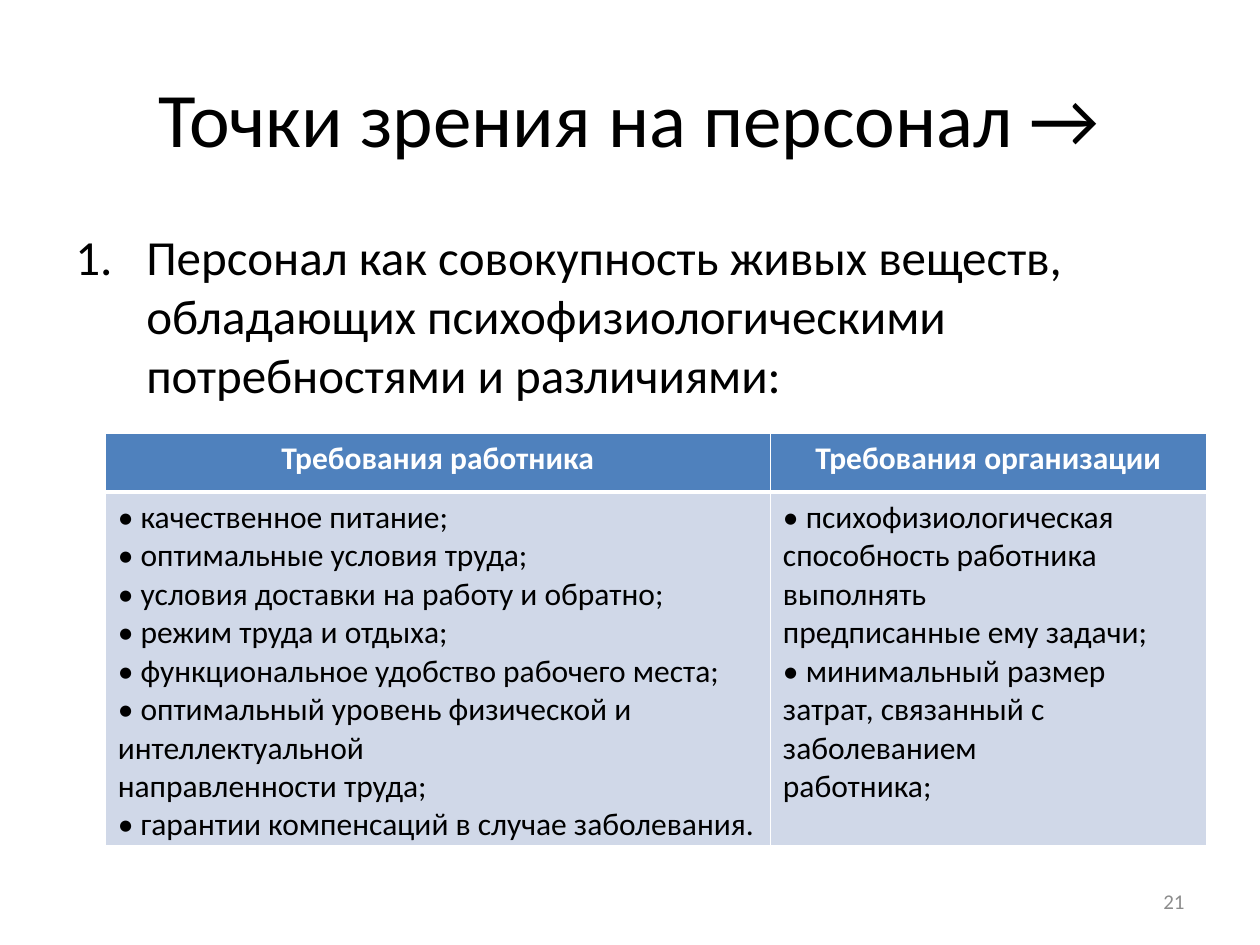
from lxml import etree
from pptx import Presentation
from pptx.dml.color import RGBColor
from pptx.enum.text import MSO_ANCHOR, PP_ALIGN
from pptx.oxml.ns import qn
from pptx.util import Cm, Pt

LEFT, CENTER, RIGHT = PP_ALIGN.LEFT, PP_ALIGN.CENTER, PP_ALIGN.RIGHT
TOP, MIDDLE = MSO_ANCHOR.TOP, MSO_ANCHOR.MIDDLE
BLACK = RGBColor(0x00, 0x00, 0x00)
WHITE = RGBColor(0xFF, 0xFF, 0xFF)
GRAY = RGBColor(0x8C, 0x8C, 0x8C)
BLUE = RGBColor(0x4F, 0x81, 0xBD)
PALE_BLUE = RGBColor(0xD0, 0xD8, 0xE8)

HEADINGS = ["Требования работника", "Требования организации"]
DEMANDS = [
    [
        "• качественное питание;",
        "• оптимальные условия труда;",
        "• условия доставки на работу и обратно;",
        "• режим труда и отдыха;",
        "• функциональное удобство рабочего места;",
        "• оптимальный уровень физической и интеллектуальной",
        "направленности труда;",
        "• гарантии компенсаций в случае заболевания.",
    ],
    [
        "• психофизиологическая способность работника выполнять",
        "предписанные ему задачи;",
        "• минимальный размер затрат, связанный с заболеванием",
        "работника;",
    ],
]


class SlideBuilder:
    def __init__(self, page, font="Calibri"):
        self.page = page
        self.font = font

    def add_span(self, para, text, size, color, align=LEFT, bold=False):
        para.alignment = align
        span = para.add_run()
        span.text = text
        span.font.name = self.font
        span.font.size = Pt(size)
        span.font.bold = bold
        span.font.color.rgb = color

    def text(self, place, text, size, color, align=LEFT, anchor=MIDDLE):
        """Add a one-paragraph text box and return its paragraph."""
        box = self.page.shapes.add_textbox(*map(Cm, place))
        frame = box.text_frame
        frame.word_wrap = True
        frame.vertical_anchor = anchor
        para = frame.paragraphs[0]
        self.add_span(para, text, size, color, align)
        return para

    def numbered(self, place, text, size, color, indent):
        para = self.text(place, text, size, color, anchor=TOP)
        para.space_before = Pt(size * 0.2)
        properties = para._p.get_or_add_pPr()
        properties.set("marL", str(Cm(indent)))
        properties.set("indent", str(-Cm(indent)))
        etree.SubElement(properties, qn("a:buFont"), typeface="+mj-lt")
        etree.SubElement(properties, qn("a:buAutoNum"), type="arabicPeriod")

    def table(self, place, widths, heights):
        frame = self.page.shapes.add_table(len(heights), len(widths), *map(Cm, place))
        table = frame.table
        for column, width in zip(table.columns, widths):
            column.width = Cm(width)
        for row, height in zip(table.rows, heights):
            row.height = Cm(height)
        return table

    def cell(self, cell, lines, fill, color, top=1, bottom=1, **style):
        frame = cell.text_frame
        for index, line in enumerate(lines):
            para = frame.add_paragraph() if index else frame.paragraphs[0]
            self.add_span(para, line, 18, color, **style)
        cell.fill.solid()
        cell.fill.fore_color.rgb = fill
        self.borders(cell, {"lnL": 1, "lnR": 1, "lnT": top, "lnB": bottom})

    def borders(self, cell, widths):
        """Draw white cell borders; the schema puts them before the fill."""
        properties = cell._tc.get_or_add_tcPr()
        for position, (side, width) in enumerate(widths.items()):
            line = etree.Element(qn(f"a:{side}"), w=str(Pt(width)))
            solid = etree.SubElement(line, qn("a:solidFill"))
            etree.SubElement(solid, qn("a:srgbClr"), val=str(WHITE))
            properties.insert(position, line)


def main():
    deck = Presentation()
    deck.slide_width, deck.slide_height = Cm(25.4), Cm(19.05)
    builder = SlideBuilder(deck.slides.add_slide(deck.slide_layouts[6]))

    builder.text((1.27, 0.76, 22.86, 3.18), "Точки зрения на персонал →", 44, BLACK, CENTER)
    builder.numbered(
        (1.27, 4.45, 22.86, 12.57),
        "Персонал как совокупность живых веществ, обладающих "
        "психофизиологическими потребностями и различиями:",
        28, BLACK, indent=1.43,
    )
    builder.text((18.2, 17.66, 5.93, 1.01), "21", 12, GRAY, RIGHT)

    table = builder.table((2.12, 8.74, 22.2, 8.3), (13.41, 8.79), (1.18, 7.12))
    for column, (heading, demands) in enumerate(zip(HEADINGS, DEMANDS)):
        builder.cell(table.cell(0, column), [heading], BLUE, WHITE,
                     bottom=3, align=CENTER, bold=True)
        builder.cell(table.cell(1, column), demands, PALE_BLUE, BLACK, top=3)

    deck.save("out.pptx")


if __name__ == "__main__":
    main()
